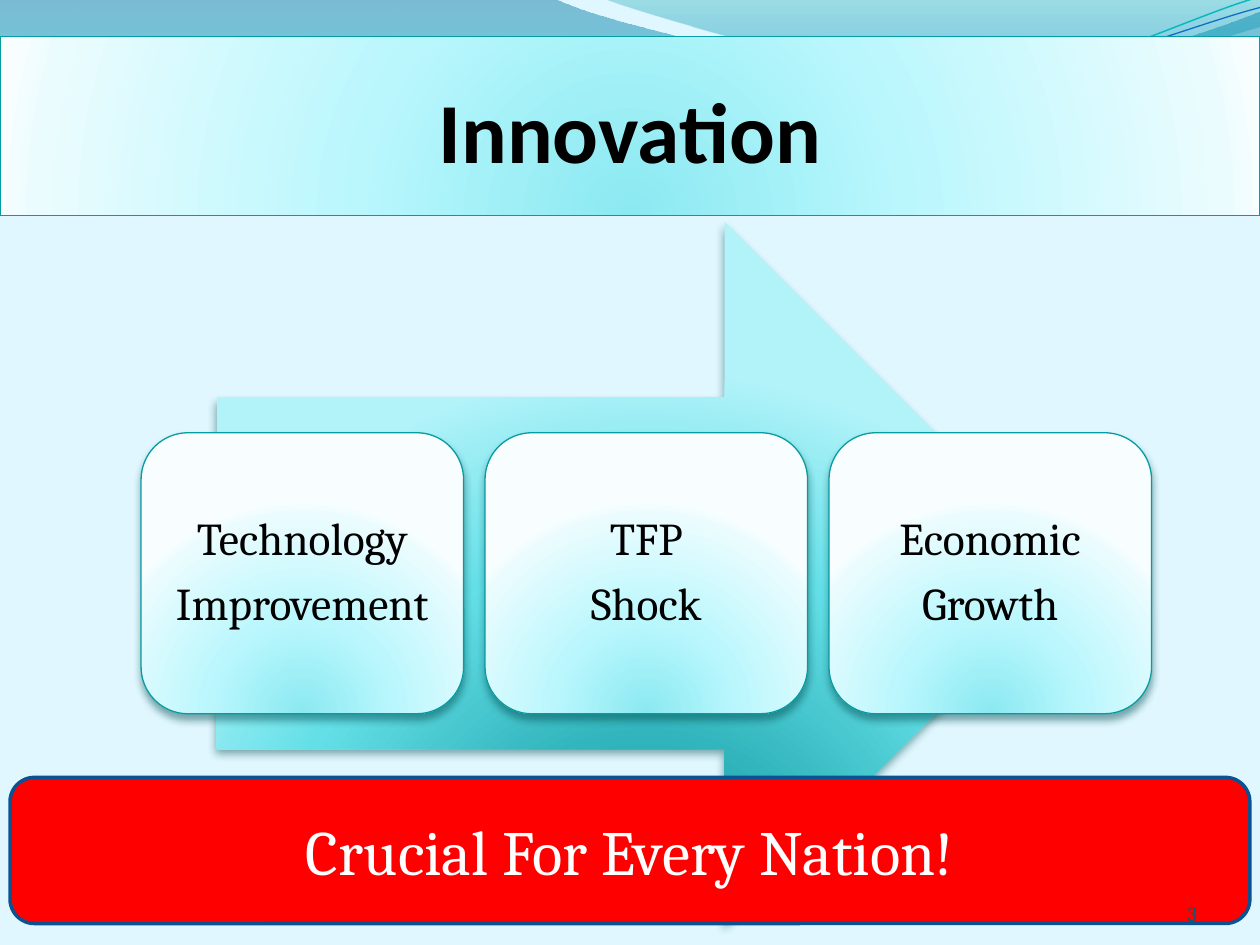
import math

from pptx import Presentation, util as u
from pptx.dml.color import RGBColor
from pptx.enum import shapes, text
from pptx.oxml import parse_xml
from pptx.oxml.ns import nsdecls, qn

COLORS = {"background": "E0F7FF", "teal": "069CA3", "shadow": "024B4E",
          "red": "FF0000", "navy": "0B5292", "black": "000000",
          "white": "FFFFFF", "number": "045D75"}
PALE = [(0, "8BE9F1"), (43, "B9F7FD"), (93, "EAFCFE"), (100, "F8FEFF")]
DEEP = [(0, "008A91"), (68, "64DFE7"), (100, "B1F3F9")]
GLOW = '<a:path path="circle"><a:fillToRect l="50000" t="130000" r="50000" b="-30000"/></a:path>'
DOWN = '<a:lin ang="5400000" scaled="1"/>'


def shade(sp, stops, direction, shadow=True):
    """Gradient from (position, colour[, opacity]) stops, with an optional soft shadow."""
    sp.fill.gradient()
    gs = "".join(
        f'<a:gs pos="{pos * 1000}"><a:srgbClr val="{color}">'
        f'<a:alpha val="{(alpha or [100])[0] * 1000}"/></a:srgbClr></a:gs>'
        for pos, color, *alpha in stops)
    pr = sp._element.spPr
    pr.replace(pr.find(qn("a:gradFill")), parse_xml(
        f'<a:gradFill {nsdecls("a")} rotWithShape="1"><a:gsLst>{gs}</a:gsLst>{direction}</a:gradFill>'))
    sp.shadow.inherit = False
    if shadow:
        pr.find(qn("a:effectLst")).append(parse_xml(
            f'<a:outerShdw {nsdecls("a")} blurRad="57150" dist="38100" dir="5400000" rotWithShape="0">'
            f'<a:srgbClr val="{COLORS["shadow"]}"><a:alpha val="48000"/></a:srgbClr></a:outerShdw>'))


def write(sp, lines, size, color, font="Cambria", bold=False, inset=0.1,
          align=text.PP_ALIGN.CENTER, anchor=text.MSO_ANCHOR.MIDDLE, spacing=None, after=0):
    tf = sp.text_frame
    margins = {f"margin_{side}": u.Inches(inset) for side in ("left", "right", "top", "bottom")}
    for name, value in {"word_wrap": True, "auto_size": text.MSO_AUTO_SIZE.NONE,
                        "vertical_anchor": anchor, **margins}.items():
        setattr(tf, name, value)
    tf.text = "\n".join(lines)
    for p in tf.paragraphs:
        p.alignment, p.line_spacing, p.space_after = align, spacing, u.Pt(after)
        for name, value in {"name": font, "size": u.Pt(size), "bold": bold}.items():
            setattr(p.runs[0].font, name, value)
        p.runs[0].font.color.rgb = RGBColor.from_string(COLORS[color])


prs = Presentation()
prs.slide_width, prs.slide_height = u.Inches(10), u.Inches(7.5)
W, H = prs.slide_width, prs.slide_height
s = prs.slides.add_slide(prs.slide_layouts[5])
s.background.fill.solid()
s.background.fill.fore_color.rgb = RGBColor.from_string(COLORS["background"])

# Waves along the top: six numbers are a Bézier segment, two a straight one
TILT = -2.7
waves = [
    {"start": (0, 0), "stops": [(0, "0074A1", 45), (100, "00C6CF", 55)],
     "segments": [(4.4, -0.01), (4.76, 0.17, 6.64, 0.63, 7.58, 0.63),
                  (8.53, 0.63, 9.58, 0.26, 10, 0.09), (10.01, 0.36),
                  (9.83, 0.44, 8.7, 0.76, 7.46, 0.75), (6.22, 0.75, 3.82, 0.28, 2.57, 0.34),
                  (1.29, 0.36, 0.46, 0.83, -0.01, 1.13)]},
    {"start": (4.79, -0.01), "stops": [(0, "00A1A9", 30), (80, "008BBF", 45)],
     "segments": [(5.09, 0.11, 6.82, 0.62, 7.69, 0.65), (8.56, 0.69, 9.61, 0.32, 10, 0.21),
                  (10, 0)]},
    {"start": (0, 1.11), "line": ("0AB8BF", 0.85), "center": (4.99, 0.58),
     "segments": [(0.48, 0.93, 1.58, 0.57, 2.77, 0.52), (3.95, 0.47, 5.93, 0.89, 7.13, 0.8),
                  (8.33, 0.71, 9.38, 0.15, 9.98, -0.02)]},
    {"start": (0, 1.04), "line": ("0F6FC6", 0.75), "center": (5, 0.59),
     "segments": [(0.47, 0.96, 1.64, 0.61, 2.83, 0.56), (4.03, 0.51, 5.97, 0.84, 7.17, 0.75),
                  (8.36, 0.67, 9.41, 0.21, 10, 0.06)]},
]
for wave in waves:
    filled = "stops" in wave
    angle = 0 if filled else math.radians(-TILT)
    cos, sin = math.cos(angle), math.sin(angle)
    cx, cy = wave.get("center", (0, 0))
    segments = []
    for seg in [wave["start"], *wave["segments"]]:
        pairs = [(x - cx, y - cy) for x, y in zip(seg[::2], seg[1::2])]
        segments.append([(u.Inches(cx + x * cos - y * sin), u.Inches(cy + x * sin + y * cos))
                         for x, y in pairs])
    builder = s.shapes.build_freeform(*segments[0][0])
    builder.add_line_segments([seg[-1] for seg in segments[1:]], close=filled)
    sp = builder.convert_to_shape()
    for node, seg in zip(list(sp._element.iter(qn("a:lnTo"))), segments[1:]):
        if len(seg) == 3:
            pts = "".join(f'<a:pt x="{x - sp.left}" y="{y - sp.top}"/>' for x, y in seg)
            node.getparent().replace(node, parse_xml(
                f'<a:cubicBezTo {nsdecls("a")}>{pts}</a:cubicBezTo>'))
    if filled:
        shade(sp, wave["stops"], DOWN, shadow=False)
        sp.line.fill.background()
    else:
        color, width = wave["line"]
        sp.rotation = TILT
        sp.fill.background()
        sp.shadow.inherit = False
        sp.line.color.rgb, sp.line.width = RGBColor.from_string(color), u.Pt(width)

# Title band, brought in front of the waves
title = s.shapes.title
s.shapes._spTree.append(title._element)
title.left, title.top, title.width, title.height = 0, u.Inches(0.29), W, u.Inches(1.42)
shade(title, PALE, GLOW, shadow=False)
title.line.color.rgb, title.line.width = RGBColor.from_string(COLORS["teal"]), u.Pt(0.75)
write(title, ["Innovation"], 48.8, "black", font="Calibri", bold=True, inset=0)
title.text_frame.margin_top = u.Inches(0.05)

# Arrow with three equal steps, centred on its axis
arrow = s.shapes.add_shape(shapes.MSO_SHAPE.RIGHT_ARROW, u.Inches(1.72), u.Inches(1.76),
                           u.Inches(6.82), u.Inches(5.58))
shade(arrow, DEEP, GLOW)
arrow.line.fill.background()

steps = [("Technology", "Improvement"), ("TFP", "Shock"), ("Economic", "Growth")]
step_w, step_h, pitch = u.Inches(2.56), u.Inches(2.23), u.Inches(2.73)
for col, words in enumerate(steps):
    sp = s.shapes.add_shape(shapes.MSO_SHAPE.ROUNDED_RECTANGLE, u.Inches(1.12) + col * pitch,
                            arrow.top + (arrow.height - step_h) // 2, step_w, step_h)
    shade(sp, PALE, GLOW)
    sp.line.color.rgb, sp.line.width = RGBColor.from_string(COLORS["teal"]), u.Pt(0.75)
    write(sp, words, 26, "black", inset=0.11, spacing=0.9, after=9)

# Closing banner and slide number
margin = u.Inches(0.08)
banner = s.shapes.add_shape(shapes.MSO_SHAPE.ROUNDED_RECTANGLE, margin, u.Inches(6.17),
                            W - 2 * margin, u.Inches(1.16))
banner.shadow.inherit = False
banner.fill.solid()
banner.fill.fore_color.rgb = RGBColor.from_string(COLORS["red"])
banner.line.color.rgb, banner.line.width = RGBColor.from_string(COLORS["navy"]), u.Pt(2)
write(banner, ["Crucial For Every Nation!"], 36, "white")

number = s.shapes.add_textbox(u.Inches(8.67), H - u.Inches(0.55), u.Inches(0.83), u.Inches(0.4))
write(number, ["3"], 12, "number", inset=0, align=text.PP_ALIGN.RIGHT,
      anchor=text.MSO_ANCHOR.BOTTOM)

prs.save("out.pptx")
